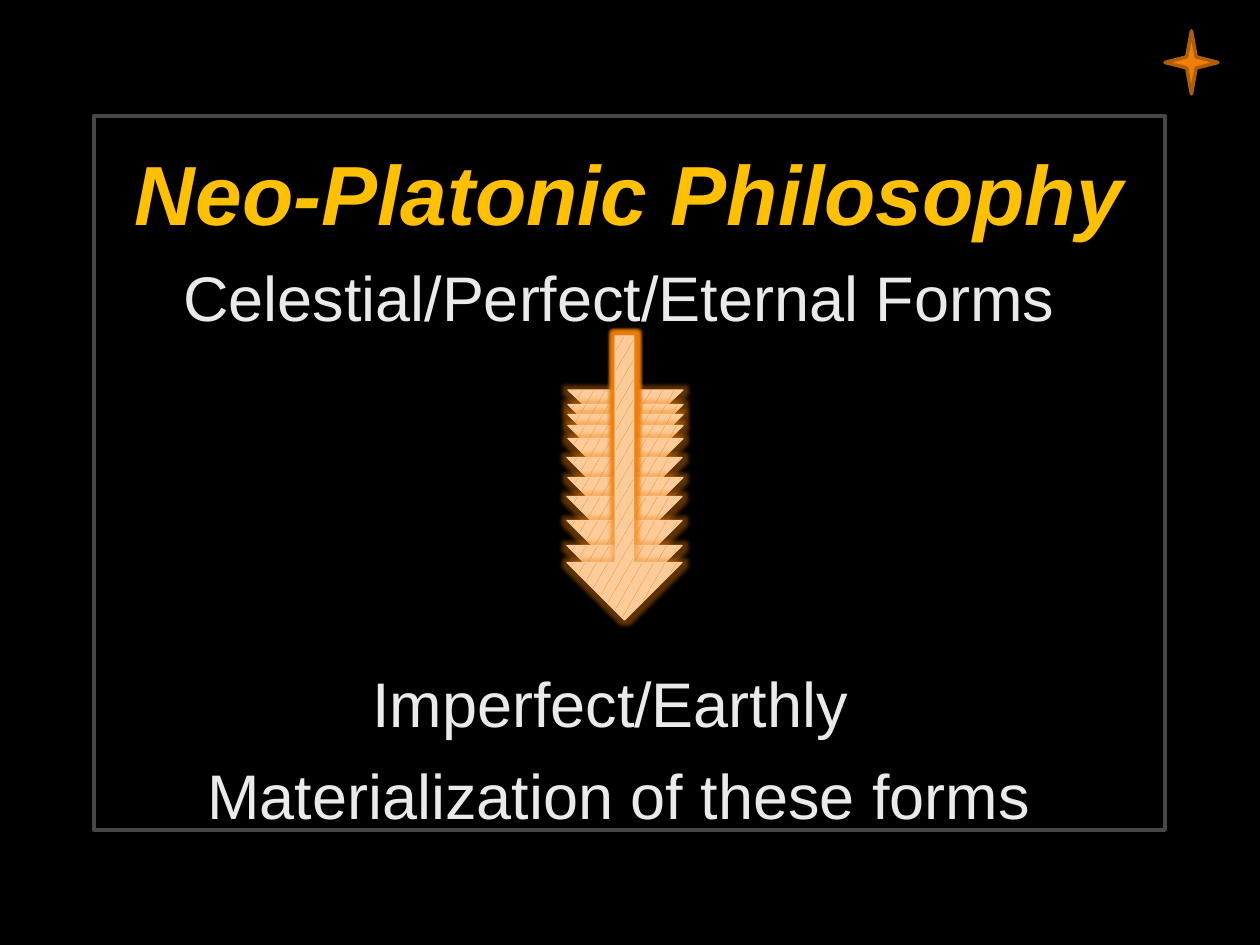
from pptx import Presentation
from pptx.dml.color import RGBColor
from pptx.enum.dml import MSO_PATTERN
from pptx.enum.shapes import MSO_SHAPE
from pptx.enum.text import MSO_ANCHOR, MSO_AUTO_SIZE, PP_ALIGN
from pptx.oxml import parse_xml
from pptx.oxml.ns import nsdecls, qn
from pptx.util import Emu, Pt

# Content: text with the space before it in points
TITLE = "Neo-Platonic Philosophy"
LINES = [
    ("Celestial/Perfect/Eternal Forms", 0),
    ("Imperfect/Earthly ", 189),
    ("Materialization of these forms", 9),
]
# Stacked arrows, back to front: left, top, height in px
ARROWS = [
    (568, 336, 108), (568, 336, 126), (568, 336, 136), (568, 336, 147),
    (568, 336, 160), (567, 336, 179), (568, 336, 199), (567, 336, 218),
    (567, 336, 242), (567, 341, 262), (567, 336, 284),
]
WIDE = 115

THEME = {
    "font": "Arial", "back": "000000", "title": "FFC000", "text": "EAEAEA",
    "frame": "474747", "glow": "F07F09", "pale": "FBCC9A", "edge": "B25E07",
    "title_size": 48, "text_size": 36,
}


def px(n):
    return Emu(round(n * 914400 / 126))


def tint(name):
    return RGBColor.from_string(THEME[name])


def place(shape, *box):
    shape.left, shape.top, shape.width, shape.height = map(px, box)


def style(par, size, color):
    par.alignment = PP_ALIGN.CENTER
    for run in par.runs:
        run.font.name = THEME["font"]
        run.font.size = Pt(THEME[size])
        run.font.color.rgb = tint(color)


def draw(kind, box, line, weight):
    shape = slide.shapes.add_shape(kind, *map(px, box))
    shape.shadow.inherit = False
    shape.line.color.rgb = tint(line)
    shape.line.width = Pt(weight)
    return shape


deck = Presentation()
deck.slide_width, deck.slide_height = px(1260), px(945)
slide = deck.slides.add_slide(deck.slide_layouts[1])
slide.background.fill.solid()
slide.background.fill.fore_color.rgb = tint("back")

# Title
title = slide.shapes.title
place(title, 94, 115, 1071, 154)
title.text_frame.text = TITLE
title.text_frame.vertical_anchor = MSO_ANCHOR.MIDDLE
title.text_frame.auto_size = MSO_AUTO_SIZE.NONE
head = title.text_frame.paragraphs[0]
style(head, "title_size", "title")
head.runs[0].font.bold = head.runs[0].font.italic = True

# Body lines, above and below the arrows
body = slide.placeholders[1]
place(body, 81, 252, 1076, 651)
frame = body.text_frame
frame.text = "\n".join(text for text, gap in LINES)
frame.auto_size = MSO_AUTO_SIZE.NONE
for par, (text, gap) in zip(frame.paragraphs, LINES):
    props = par._p.get_or_add_pPr()
    props.set("marL", "0")
    props.set("indent", "0")
    props.append(parse_xml(f"<a:buNone {nsdecls('a')}/>"))
    par.space_before = Pt(gap)
    style(par, "text_size", "text")

# Frame
border = draw(MSO_SHAPE.RECTANGLE, (94, 116, 1071, 714), "frame", 2.25)
border.fill.background()

# Glowing arrows
for left, top, tall in ARROWS:
    arrow = draw(MSO_SHAPE.DOWN_ARROW, (left, top, WIDE, tall), "pale", 0.75)
    arrow.adjustments[0], arrow.adjustments[1] = 0.159, 0.5
    arrow.fill.patterned()
    arrow.fill.pattern = MSO_PATTERN.SMALL_CONFETTI
    arrow.fill.fore_color.rgb = tint("glow")
    arrow.fill.back_color.rgb = tint("pale")
    arrow._element.spPr.find(qn("a:effectLst")).append(parse_xml(
        f'<a:glow {nsdecls("a")} rad="63500"><a:srgbClr val="{THEME["glow"]}">'
        '<a:alpha val="40000"/></a:srgbClr></a:glow>'))

# Corner star
star = draw(MSO_SHAPE.STAR_4_POINT, (1165, 31, 53, 63), "edge", 2)
star.adjustments[0] = 0.125
star.fill.solid()
star.fill.fore_color.rgb = tint("glow")

deck.save("out.pptx")
